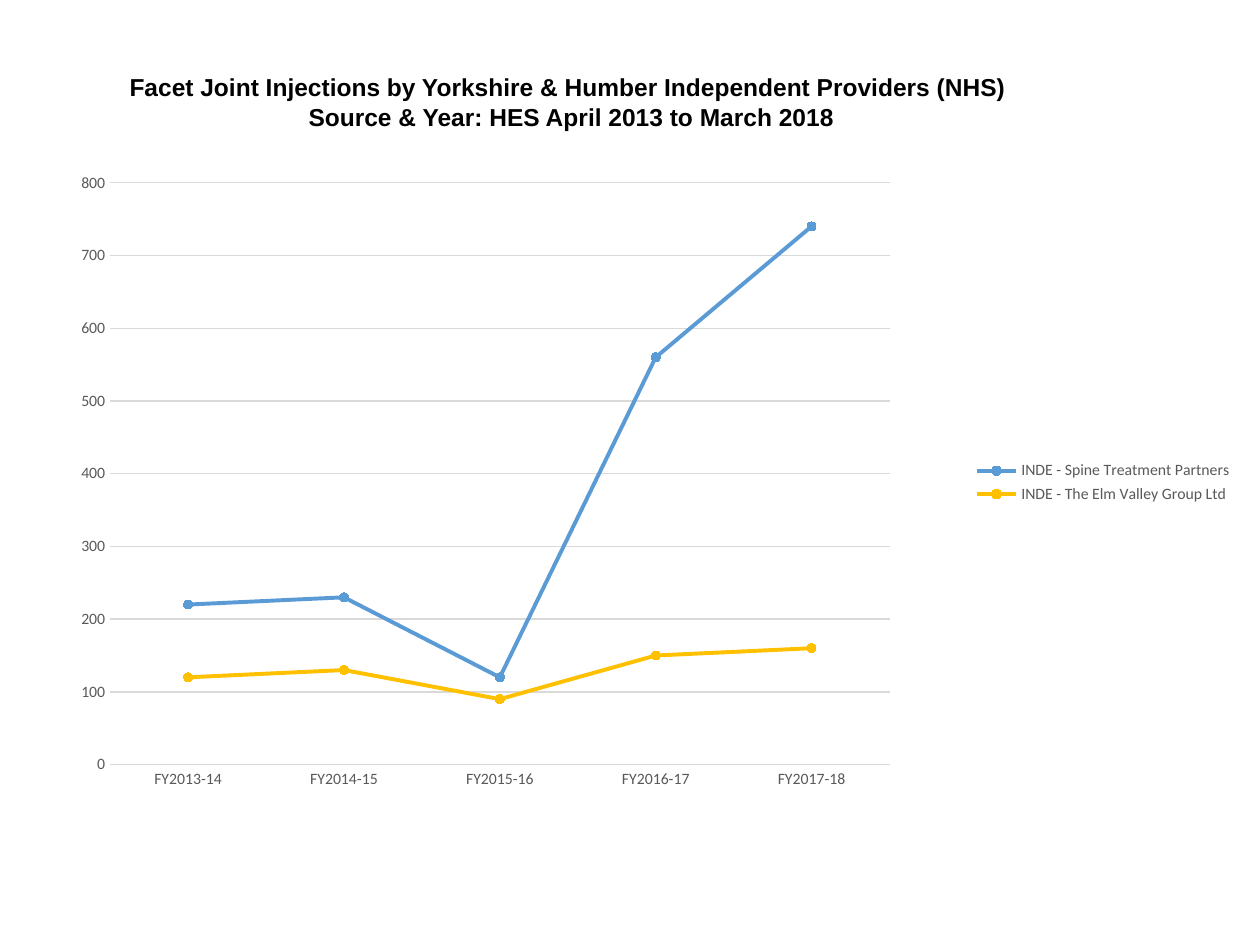
from dataclasses import dataclass

from lxml.etree import SubElement
from pptx import Presentation
from pptx.chart.data import CategoryChartData
from pptx.dml.color import RGBColor
from pptx.enum.chart import XL_CHART_TYPE, XL_LEGEND_POSITION, XL_MARKER_STYLE, XL_TICK_MARK
from pptx.enum.text import MSO_AUTO_SIZE, PP_ALIGN
from pptx.oxml.ns import qn
from pptx.util import Inches, Pt


@dataclass(frozen=True)
class Theme:
    title_font: str = "Arial"
    chart_font: str = "Calibri"
    title_size: float = 14
    chart_size: float = 10
    label_size: float = 9
    black: str = "000000"
    label: str = "595959"
    grid: str = "D9D9D9"
    series: tuple = ("5B9BD5", "FFC000")
    hairline: float = 0.75
    series_line: float = 2.25
    marker_size: int = 5


THEME = Theme()
SLIDE_WIDTH, SLIDE_HEIGHT = Inches(10), Inches(7.5)

# Left, top, width and height as shares of the slide
TITLE_AREA = (0.026, 0.07, 0.855, 0.076)
CHART_AREA = (0.045, 0.171, 0.943, 0.679)
# Shares of the chart
PLOT_AREA = {"x": 0.045, "y": 0.033, "w": 0.656, "h": 0.907}

TITLE_LINES = (
    "Facet Joint Injections by Yorkshire & Humber Independent Providers (NHS) ",
    "Source & Year: HES April 2013 to March 2018",
)
YEARS = [f"FY{year}-{year % 100 + 1}" for year in range(2013, 2018)]
INJECTIONS = {
    "INDE - Spine Treatment Partners": (220, 230, 120, 560, 740),
    "INDE - The Elm Valley Group Ltd": (120, 130, 90, 150, 160),
}


def apply(target, values):
    for name, value in values.items():
        setattr(target, name, value)


def place(shares):
    lengths = (SLIDE_WIDTH, SLIDE_HEIGHT) * 2
    return [round(share * length) for share, length in zip(shares, lengths)]


def style_font(font, name, size, color, bold=False):
    apply(font, {"name": name, "size": Pt(size), "bold": bold})
    font.color.rgb = RGBColor.from_string(color)


def style_line(line, color, width):
    line.color.rgb = RGBColor.from_string(color)
    line.width = Pt(width)


def add_title(slide):
    frame = slide.shapes.add_textbox(*place(TITLE_AREA)).text_frame
    apply(frame, {"word_wrap": True, "auto_size": MSO_AUTO_SIZE.SHAPE_TO_FIT_TEXT})
    frame.text = "\n".join(TITLE_LINES)
    for paragraph in frame.paragraphs:
        paragraph.alignment = PP_ALIGN.CENTER
        for run in paragraph.runs:
            style_font(run.font, THEME.title_font, THEME.title_size, THEME.black, True)


def fix_plot_area(chart):
    """Pin the inner plot area to its shares of the chart."""
    plot_area = chart.element.find(".//" + qn("c:plotArea"))
    for layout in plot_area.findall(qn("c:layout")):
        plot_area.remove(layout)
    layout = SubElement(plot_area, qn("c:layout"))
    plot_area.insert(0, layout)
    manual = SubElement(layout, qn("c:manualLayout"))
    settings = {"layoutTarget": "inner", "xMode": "edge", "yMode": "edge", **PLOT_AREA}
    for name, value in settings.items():
        SubElement(manual, qn(f"c:{name}")).set("val", str(value))


def style_axes(chart):
    category_axis, value_axis = chart.category_axis, chart.value_axis
    for axis in (category_axis, value_axis):
        apply(axis, {"major_tick_mark": XL_TICK_MARK.NONE,
                     "minor_tick_mark": XL_TICK_MARK.NONE})
        style_font(axis.tick_labels.font, THEME.chart_font, THEME.label_size, THEME.label)
    apply(value_axis, {"minimum_scale": 0, "maximum_scale": 800,
                       "major_unit": 100, "has_major_gridlines": True})
    style_line(category_axis.format.line, THEME.grid, THEME.hairline)
    style_line(value_axis.major_gridlines.format.line, THEME.grid, THEME.hairline)
    value_axis.format.line.fill.background()


def style_series(series, color):
    series.smooth = False
    style_line(series.format.line, color, THEME.series_line)
    marker = series.marker
    apply(marker, {"style": XL_MARKER_STYLE.CIRCLE, "size": THEME.marker_size})
    marker.format.fill.solid()
    marker.format.fill.fore_color.rgb = RGBColor.from_string(color)
    style_line(marker.format.line, color, THEME.hairline)


def add_injections_chart(slide):
    data = CategoryChartData()
    data.categories = YEARS
    for name, values in INJECTIONS.items():
        data.add_series(name, values)
    chart = slide.shapes.add_chart(
        XL_CHART_TYPE.LINE_MARKERS, *place(CHART_AREA), data).chart
    apply(chart, {"has_title": False, "has_legend": True})
    style_font(chart.font, THEME.chart_font, THEME.chart_size, THEME.black)
    apply(chart.legend, {"position": XL_LEGEND_POSITION.RIGHT, "include_in_layout": False})
    style_font(chart.legend.font, THEME.chart_font, THEME.label_size, THEME.label)
    chart.plots[0].vary_by_categories = False
    for series, color in zip(chart.plots[0].series, THEME.series):
        style_series(series, color)
    style_axes(chart)
    fix_plot_area(chart)


def main():
    presentation = Presentation()
    apply(presentation, {"slide_width": SLIDE_WIDTH, "slide_height": SLIDE_HEIGHT})
    slide = presentation.slides.add_slide(presentation.slide_layouts[6])
    add_title(slide)
    add_injections_chart(slide)
    presentation.save("out.pptx")


if __name__ == "__main__":
    main()
